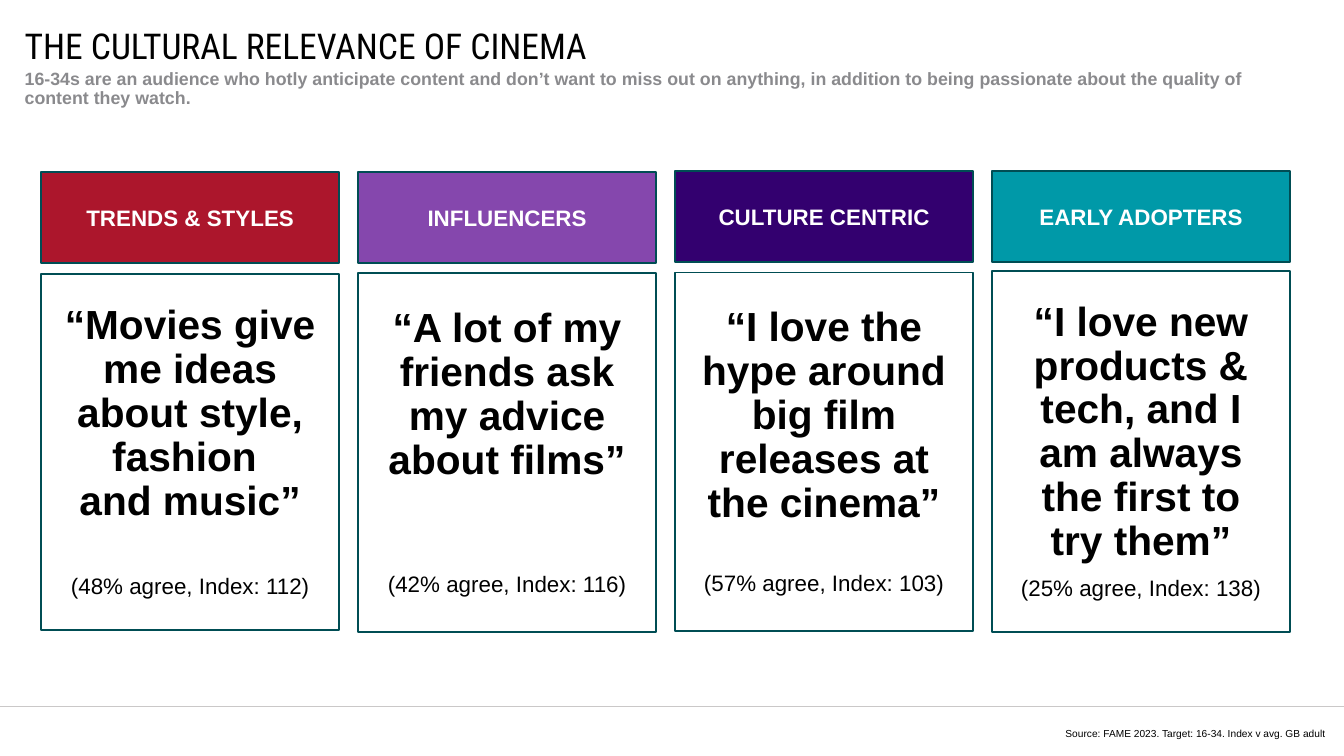
from lxml import etree
from pptx import Presentation
from pptx.dml.color import RGBColor
from pptx.enum.shapes import MSO_CONNECTOR, MSO_SHAPE
from pptx.enum.text import MSO_ANCHOR, PP_ALIGN
from pptx.oxml.ns import qn
from pptx.util import Pt

"""Build the slide on the cultural relevance of cinema."""

LEFT, CENTER, RIGHT = PP_ALIGN.LEFT, PP_ALIGN.CENTER, PP_ALIGN.RIGHT
TOP, MIDDLE = MSO_ANCHOR.TOP, MSO_ANCHOR.MIDDLE
RECT, STRAIGHT = MSO_SHAPE.RECTANGLE, MSO_CONNECTOR.STRAIGHT

TITLE = "THE CULTURAL RELEVANCE OF CINEMA"
SUBTITLE = (
    "16-34s are an audience who hotly anticipate content and don’t want to miss out on "
    "anything, in addition to being passionate about the quality of content they watch."
)
SOURCE = "Source: FAME 2023. Target: 16-34. Index v avg. GB adult"

# heading, colour, heading top, card top, card bottom, quote, gap, score
COLUMNS = [
    ("TRENDS & STYLES", "AC162C", 135.4, 216, 496.1,
     "“Movies give me ideas about style, fashion \vand music”", 40.6, "(48% agree, Index: 112)"),
    ("INFLUENCERS", "8547AD", 135.4, 215.3, 497.5,
     "“A lot of my friends ask my advice about films”", 71.2, "(42% agree, Index: 116)"),
    ("CULTURE CENTRIC", "33006F", 134.6, 214.6, 496.8,
     "“I love the hype around big film releases at the cinema”", 36.6, "(57% agree, Index: 103)"),
    ("EARLY ADOPTERS", "0099A8", 134.6, 213.1, 497.5,
     "“I love new products & tech, and I am always the first to try them”", 10,
     "(25% agree, Index: 138)"),
]

SLIDE_W, SLIDE_H = 1058.4, 595.44
COLUMN_LEFT, COLUMN_W, COLUMN_PITCH = 32.4, 234.8, 249.6
HEADING_H, PADDING = 72, 15.84
RULE_Y = 556.6
BLACK, WHITE, GREY, BORDER, RULE = "000000", "FFFFFF", "8A8A8D", "004D54", "CAC8C8"


def rgb(value):
    """Turn a hex string into a colour."""
    return RGBColor.from_string(value)


def set_frame(tf, anchor, inset):
    """Set wrapping, anchor and equal insets of a text frame."""
    tf.word_wrap = True
    tf.vertical_anchor = anchor
    tf.margin_left = tf.margin_right = tf.margin_top = tf.margin_bottom = Pt(inset)


def write(p, text, size, color, align, bold=False, font="Arial", spacing=None):
    """Fill one paragraph with text in a single style."""
    p.text = text
    p.alignment = align
    p.line_spacing = spacing
    p.font.name, p.font.size, p.font.bold = font, Pt(size), bold
    p.font.color.rgb = rgb(color)


def add_text(s, x, y, w, h, text, size, color, align=LEFT, anchor=TOP, **style):
    """Add a text box holding one paragraph."""
    tf = s.shapes.add_textbox(Pt(x), Pt(y), Pt(w), Pt(h)).text_frame
    set_frame(tf, anchor, 0)
    write(tf.paragraphs[0], text, size, color, align, **style)


def add_box(s, x, y, h, fill=None):
    """Add a bordered column box and return its text frame."""
    sp = s.shapes.add_shape(RECT, Pt(x), Pt(y), Pt(COLUMN_W), Pt(h))
    sp.shadow.inherit = False
    if fill:
        sp.fill.solid()
        sp.fill.fore_color.rgb = rgb(fill)
    else:
        sp.fill.background()
    sp.line.color.rgb = rgb(BORDER)
    sp.line.width = Pt(1.5)
    set_frame(sp.text_frame, MIDDLE, PADDING)
    return sp.text_frame


def add_column(s, x, heading, color, heading_top, card_top, card_bottom, quote, gap, score):
    """Add one quote card with its coloured heading."""
    tf = add_box(s, x, card_top, card_bottom - card_top)
    write(tf.paragraphs[0], quote, 32, BLACK, CENTER, bold=True, spacing=0.9)
    p = tf.add_paragraph()
    write(p, score, 17.6, BLACK, CENTER, spacing=0.9)
    p.space_before = Pt(gap)
    tf = add_box(s, x, heading_top, HEADING_H, color)
    write(tf.paragraphs[0], heading, 17.6, WHITE, CENTER, bold=True)


def add_rule(s):
    """Add the thin line above the source."""
    line = s.shapes.add_connector(STRAIGHT, Pt(0), Pt(RULE_Y), Pt(SLIDE_W), Pt(RULE_Y))
    line.line.color.rgb = rgb(RULE)
    line.line.width = Pt(0.5)
    etree.SubElement(line._element.spPr, qn("a:effectLst"))


def main():
    """Build and save the slide."""
    prs = Presentation()
    prs.slide_width, prs.slide_height = Pt(SLIDE_W), Pt(SLIDE_H)
    s = prs.slides.add_slide(prs.slide_layouts[6])
    add_rule(s)
    add_text(s, 827.3, 573.8, 216.7, 8.4, SOURCE, 8, BLACK, RIGHT, spacing=Pt(8.4))
    for i, column in enumerate(COLUMNS):
        add_column(s, COLUMN_LEFT + i * COLUMN_PITCH, *column)
    add_text(s, 19.4, 23.8, 617, 23, TITLE, 28, BLACK, anchor=MIDDLE, font="Roboto Condensed")
    add_text(s, 19.4, 55.4, 978.5, 34.6, SUBTITLE, 14, GREY, bold=True, spacing=Pt(15))
    prs.save("out.pptx")


if __name__ == "__main__":
    main()
